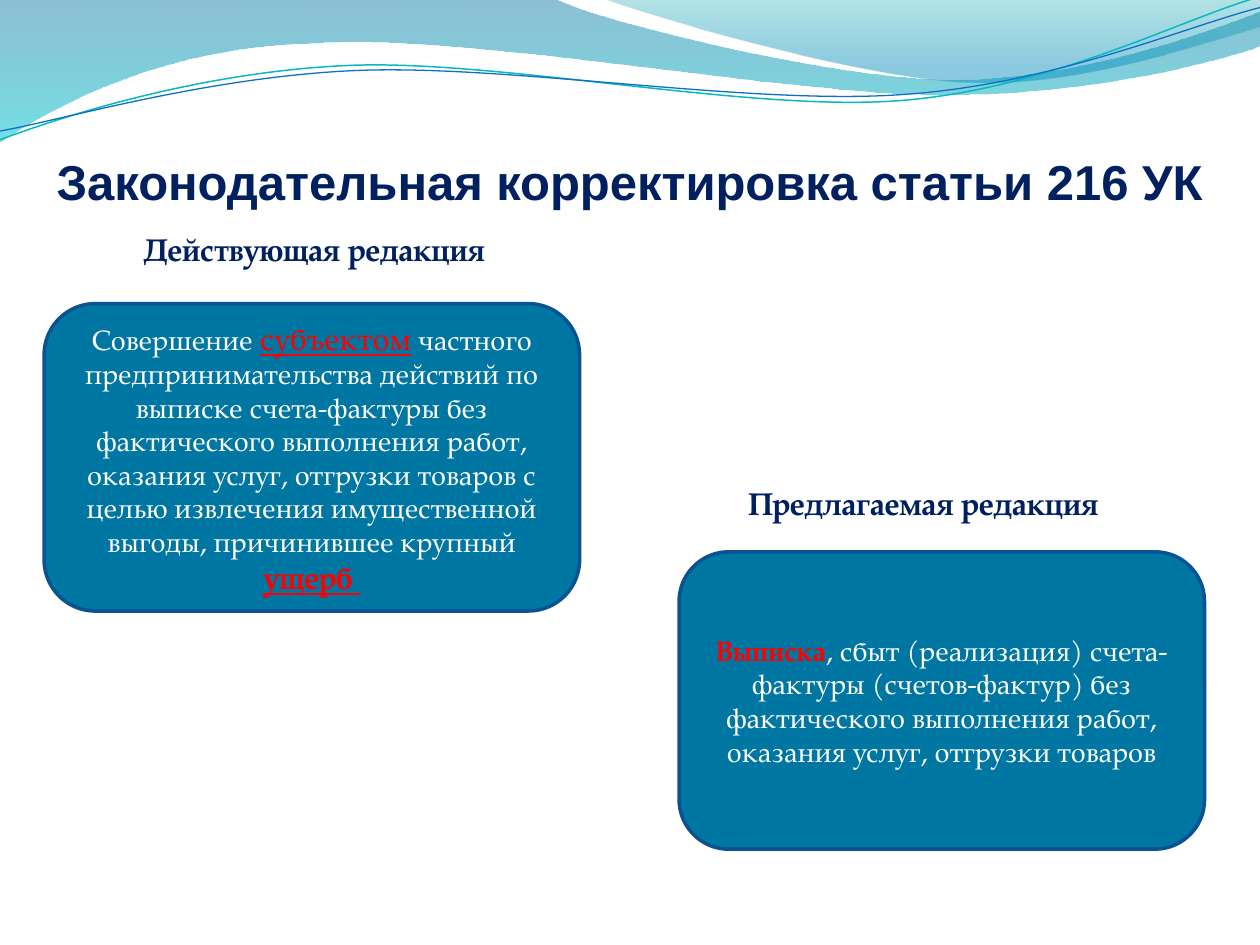
from pptx import Presentation
from pptx.dml.color import RGBColor
from pptx.enum.shapes import MSO_SHAPE
from pptx.enum.text import MSO_ANCHOR, MSO_AUTO_SIZE, PP_ALIGN
from pptx.oxml.ns import qn
from pptx.util import Inches, Pt
from lxml.etree import SubElement

NAVY = RGBColor(0x00, 0x20, 0x60)
RED = RGBColor(0xFF, 0x00, 0x00)
WHITE = RGBColor(0xFF, 0xFF, 0xFF)
CARD_FILL = RGBColor(0x00, 0x76, 0xA3)
CARD_EDGE = RGBColor(0x0B, 0x52, 0x92)
WAVE_BLUE = RGBColor(0x00, 0x74, 0xA1)
WAVE_CYAN = RGBColor(0x00, 0xC6, 0xCF)
CREST_TEAL = RGBColor(0x00, 0xA1, 0xA9)
CREST_BLUE = RGBColor(0x00, 0x8B, 0xBF)
LINE_TEAL = RGBColor(0x0A, 0xB8, 0xBF)
LINE_BLUE = RGBColor(0x0F, 0x6F, 0xC6)
SERIF = "TeX Gyre Pagella"

PLAIN = dict(name=SERIF, size=Pt(16), color=WHITE)
MARKED = PLAIN | dict(color=RED, bold=True)
HEADING = dict(name=SERIF, size=Pt(18), color=NAVY, bold=True)
TITLE = dict(name="Arial", size=Pt(28), color=NAVY, bold=True)

# Waves: start point, then segments of one point (straight) or three (Bezier)
WAVE = [(0, 0), [(4.4, -0.01)],
        [(4.76, 0.17), (6.64, 0.63), (7.58, 0.63)],
        [(8.53, 0.63), (9.58, 0.26), (10, 0.09)], [(10.01, 0.36)],
        [(9.83, 0.44), (8.7, 0.76), (7.46, 0.75)],
        [(6.22, 0.75), (3.82, 0.28), (2.57, 0.34)],
        [(1.29, 0.36), (0.46, 0.83), (-0.01, 1.13)], [(0, 0)]]
CREST = [(4.79, -0.01),
         [(5.09, 0.11), (6.82, 0.62), (7.69, 0.65)],
         [(8.56, 0.69), (9.61, 0.32), (10, 0.21)],
         [(10, 0)], [(4.79, -0.01)]]
TEAL_CURVE = [(0, 1.11),
              [(0.48, 0.93), (1.58, 0.57), (2.77, 0.52)],
              [(3.95, 0.47), (5.93, 0.89), (7.13, 0.8)],
              [(8.33, 0.71), (9.38, 0.15), (9.98, -0.02)]]
BLUE_CURVE = [(0, 1.04),
              [(0.47, 0.96), (1.64, 0.61), (2.83, 0.56)],
              [(4.03, 0.51), (5.97, 0.84), (7.17, 0.75)],
              [(8.36, 0.67), (9.41, 0.21), (10, 0.06)]]


def add_outline(slide, outline, close):
    start, *segments = outline
    builder = slide.shapes.build_freeform(*map(Inches, start))
    builder.add_line_segments(
        [tuple(map(Inches, segment[-1])) for segment in segments], close=close)
    shape = builder.convert_to_shape()
    shape.shadow.inherit = False

    # Bend the straight segments that have control points
    straights = list(shape._element.spPr.iter(qn("a:lnTo")))
    for straight, segment in zip(straights, segments):
        if len(segment) == 3:
            bend = straight.getparent().makeelement(qn("a:cubicBezTo"))
            for x, y in segment:
                SubElement(bend, qn("a:pt"), x=str(Inches(x) - shape.left),
                           y=str(Inches(y) - shape.top))
            straight.getparent().replace(straight, bend)
    return shape


def add_wave(slide, outline, stops):
    wave = add_outline(slide, outline, close=True)
    wave.line.fill.background()
    wave.fill.gradient()
    wave.fill.gradient_angle = 270
    for stop, (position, color, _) in zip(wave.fill.gradient_stops, stops):
        stop.position = position
        stop.color.rgb = color
    tints = list(wave._element.spPr.iter(qn("a:srgbClr")))
    for tint, (_, _, opacity) in zip(tints, stops):
        SubElement(tint, qn("a:alpha"), val=str(opacity * 1000))


def add_header(slide):
    add_wave(slide, WAVE, [(0, WAVE_BLUE, 45), (1, WAVE_CYAN, 55)])
    add_wave(slide, CREST, [(0, CREST_TEAL, 30), (0.8, CREST_BLUE, 45)])
    for outline, color, width in ((TEAL_CURVE, LINE_TEAL, 0.85),
                                  (BLUE_CURVE, LINE_BLUE, 0.75)):
        curve = add_outline(slide, outline, close=False)
        curve.fill.background()
        curve.line.color.rgb = color
        curve.line.width = Pt(width)


def add_runs(paragraph, runs):
    for text, style in runs:
        run = paragraph.add_run()
        run.text = text
        for key, value in style.items():
            if key == "color":
                run.font.color.rgb = value
            else:
                setattr(run.font, key, value)


def add_label(slide, box, text, style):
    label = slide.shapes.add_textbox(*map(Inches, box)).text_frame
    label.word_wrap = False
    label.auto_size = MSO_AUTO_SIZE.SHAPE_TO_FIT_TEXT
    add_runs(label.paragraphs[0], [(text, style)])


def add_edition(slide, box, heading, heading_box, runs):
    """Card with the wording; heading_box is measured from the card's corner."""
    left, top, _, _ = box
    card = slide.shapes.add_shape(MSO_SHAPE.ROUNDED_RECTANGLE, *map(Inches, box))
    card.shadow.inherit = False
    card.fill.solid()
    card.fill.fore_color.rgb = CARD_FILL
    card.line.color.rgb = CARD_EDGE
    card.line.width = Pt(2)
    wording = card.text_frame
    wording.word_wrap = True
    wording.vertical_anchor = MSO_ANCHOR.MIDDLE
    wording.paragraphs[0].alignment = PP_ALIGN.CENTER
    add_runs(wording.paragraphs[0], runs)

    dx, dy, width, height = heading_box
    add_label(slide, (left + dx, top + dy, width, height), heading, HEADING)


def main():
    deck = Presentation()
    deck.slide_width, deck.slide_height = Inches(10), Inches(7.5)
    slide = deck.slides.add_slide(deck.slide_layouts[6])

    add_header(slide)
    add_label(slide, (0.35, 1.15, 9.41, 0.57),
              "Законодательная корректировка статьи 216 УК", TITLE)

    # Current wording
    add_edition(slide, (0.35, 2.41, 4.25, 2.44),
                "Действующая редакция", (0.69, -0.63, 3.16, 0.4), [
        ("Совершение ", PLAIN),
        ("субъектом", PLAIN | dict(size=Pt(18), color=RED, underline=True)),
        (" частного предпринимательства действий по выписке счета-фактуры "
         "без фактического выполнения работ, оказания услуг, отгрузки товаров "
         "с целью извлечения имущественной выгоды, причинившее крупный ", PLAIN),
        ("ущерб ", MARKED | dict(size=Pt(18), underline=True)),
    ])

    # Proposed wording
    add_edition(slide, (5.39, 4.38, 4.17, 2.36),
                "Предлагаемая редакция", (0.45, -0.59, 3.21, 0.4), [
        ("Выписка", MARKED),
        (", сбыт (реализация) счета-фактуры (счетов-фактур) без фактического "
         "выполнения работ, оказания услуг, отгрузки товаров", PLAIN),
    ])

    deck.save("out.pptx")


if __name__ == "__main__":
    main()
